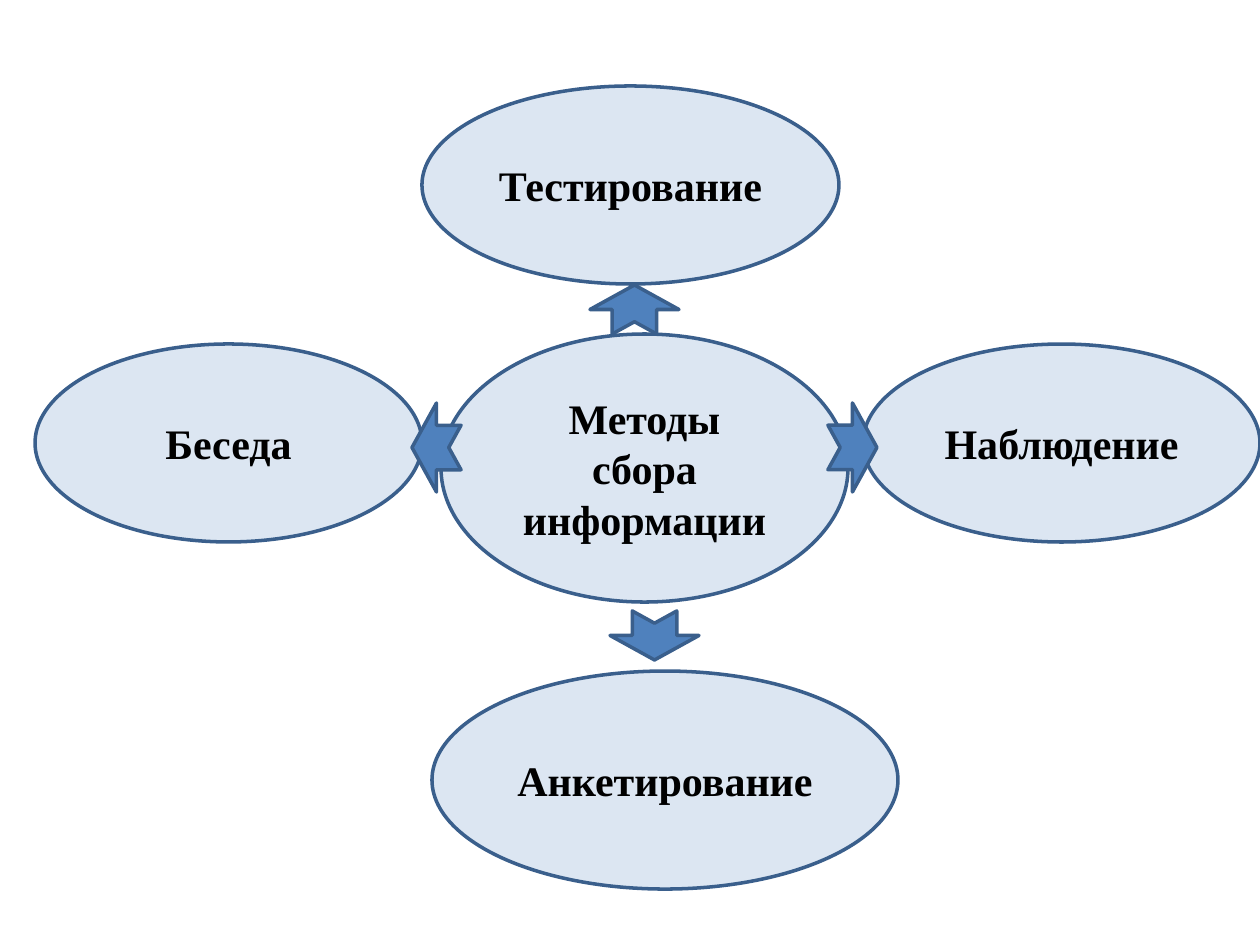
from dataclasses import dataclass

from pptx import Presentation
from pptx.dml.color import RGBColor
from pptx.enum.shapes import MSO_SHAPE
from pptx.enum.text import MSO_ANCHOR, PP_ALIGN
from pptx.util import Emu, Pt

OVAL = MSO_SHAPE.OVAL
NOTCHED_ARROW = MSO_SHAPE.NOTCHED_RIGHT_ARROW
CENTER = PP_ALIGN.CENTER
MIDDLE = MSO_ANCHOR.MIDDLE

EMU_PER_PX = 914400 / 126
SLIDE_WIDTH, SLIDE_HEIGHT = 1260, 945
ARROW_WIDTH, ARROW_HEIGHT = 49, 89
BLANK_LAYOUT = 6


@dataclass(frozen=True)
class Theme:
    oval_fill: RGBColor = RGBColor(0xDC, 0xE6, 0xF2)
    arrow_fill: RGBColor = RGBColor(0x4F, 0x81, 0xBD)
    outline: RGBColor = RGBColor(0x3A, 0x5F, 0x8C)
    text: RGBColor = RGBColor(0, 0, 0)
    font: str = "Times New Roman"
    text_size: int = 24
    line_width: int = 2


@dataclass(frozen=True)
class Oval:
    text: str
    left: int
    top: int
    width: int
    height: int


@dataclass(frozen=True)
class Arrow:
    left: int
    top: int
    rotation: int


THEME = Theme()

# Central topic first, then the four methods around it
OVALS = (
    Oval("Методы сбора информации", 441, 334, 407, 268),
    Oval("Беседа", 35, 344, 387, 198),
    Oval("Анкетирование", 432, 671, 466, 218),
    Oval("Тестирование", 422, 86, 417, 198),
    Oval("Наблюдение", 863, 344, 397, 198),
)

# Unrotated positions: up, down, left, right
ARROWS = (
    Arrow(610, 265, 270),
    Arrow(630, 591, 90),
    Arrow(412, 403, 180),
    Arrow(828, 403, 0),
)


def px(length: int) -> Emu:
    return Emu(round(length * EMU_PER_PX))


def add_outlined_shape(slide, kind, left: int, top: int, width: int, height: int,
                       fill: RGBColor):
    shape = slide.shapes.add_shape(kind, px(left), px(top), px(width), px(height))
    shape.shadow.inherit = False
    shape.fill.solid()
    shape.fill.fore_color.rgb = fill
    shape.line.color.rgb = THEME.outline
    shape.line.width = Pt(THEME.line_width)
    return shape


def draw_oval(slide, oval: Oval) -> None:
    shape = add_outlined_shape(slide, OVAL, oval.left, oval.top,
                               oval.width, oval.height, THEME.oval_fill)
    frame = shape.text_frame
    frame.word_wrap = True
    frame.vertical_anchor = MIDDLE
    paragraph = frame.paragraphs[0]
    paragraph.alignment = CENTER
    run = paragraph.add_run()
    run.text = oval.text
    font_format = {"name": THEME.font, "size": Pt(THEME.text_size), "bold": True}
    for attribute, value in font_format.items():
        setattr(run.font, attribute, value)
    run.font.color.rgb = THEME.text


def draw_arrow(slide, arrow: Arrow) -> None:
    shape = add_outlined_shape(slide, NOTCHED_ARROW, arrow.left, arrow.top,
                               ARROW_WIDTH, ARROW_HEIGHT, THEME.arrow_fill)
    shape.rotation = arrow.rotation


def main() -> None:
    presentation = Presentation()
    presentation.slide_width = px(SLIDE_WIDTH)
    presentation.slide_height = px(SLIDE_HEIGHT)
    slide = presentation.slides.add_slide(presentation.slide_layouts[BLANK_LAYOUT])

    for oval in OVALS:
        draw_oval(slide, oval)
    for arrow in ARROWS:
        draw_arrow(slide, arrow)

    presentation.save("out.pptx")


if __name__ == "__main__":
    main()
